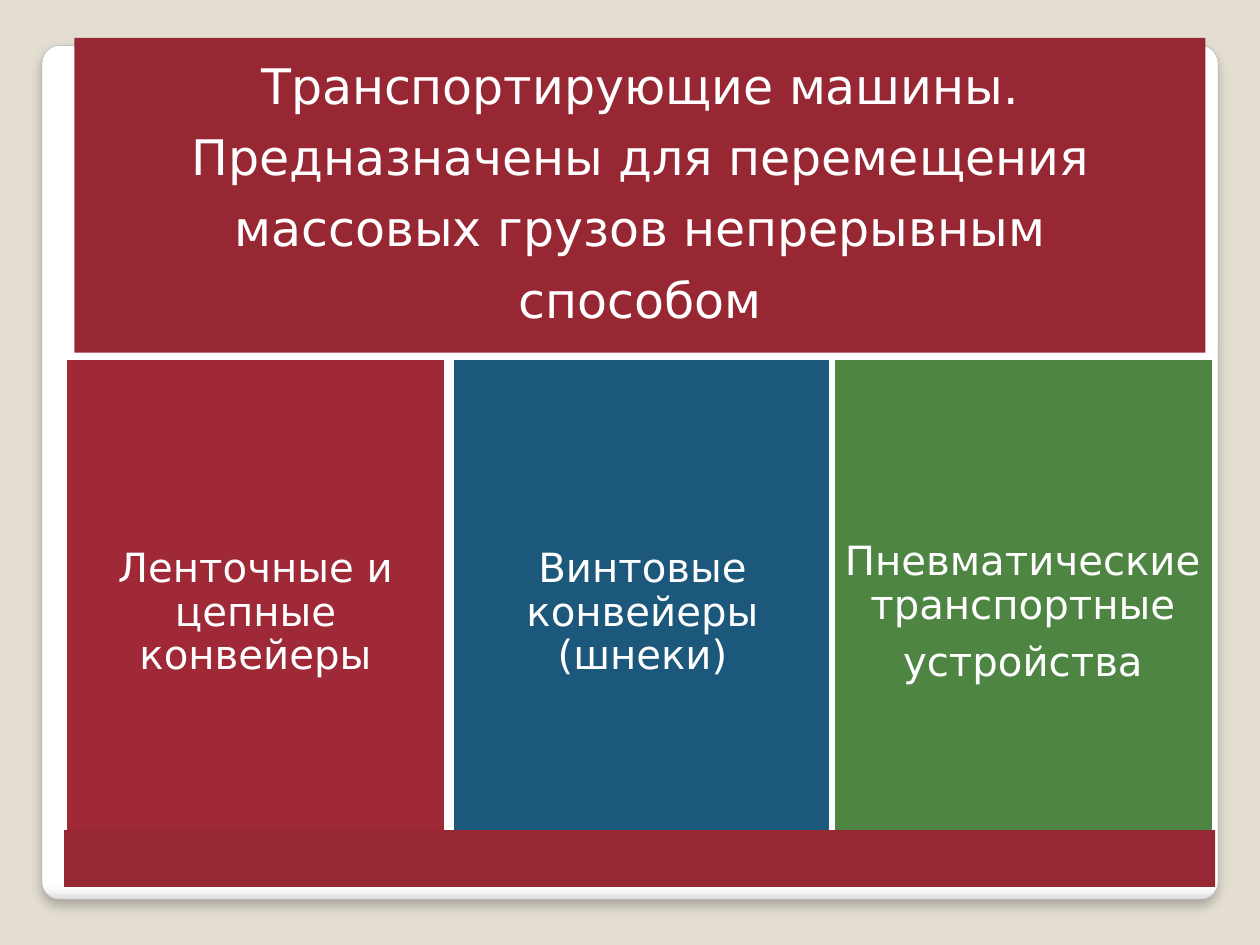
import pptx
import pptx.dml.color
import pptx.enum.shapes
import pptx.enum.text
import pptx.oxml
import pptx.oxml.ns
import pptx.util

Pt = pptx.util.Pt
RGBColor = pptx.dml.color.RGBColor
qn = pptx.oxml.ns.qn
SHAPE = pptx.enum.shapes.MSO_SHAPE

PAPER = RGBColor(0xE3, 0xDE, 0xD1)
WHITE = RGBColor(0xFF, 0xFF, 0xFF)
FRAME_LINE = RGBColor(0xA4, 0xA4, 0xA4)
DARK_RED = RGBColor(0x98, 0x27, 0x34)
RED = RGBColor(0x9F, 0x29, 0x36)
BLUE = RGBColor(0x1B, 0x58, 0x7C)
GREEN = RGBColor(0x4E, 0x85, 0x42)

FONT = "DejaVu Sans"
DRAWING = 'xmlns:a="http://schemas.openxmlformats.org/drawingml/2006/main"'
FRAME_STOPS = [(0, "FFFFFF"), (98, "FFFFFF"), (99, "F7F7F7"), (100, "DADADA")]

TITLE = [
    "Транспортирующие машины.",
    "Предназначены для перемещения",
    "массовых грузов непрерывным",
    "способом",
]
# Left edge, colour and paragraphs of each machine type
MACHINES = [
    (36.7, RED, ["Ленточные и цепные конвейеры"]),
    (257.8, BLUE, ["Винтовые конвейеры (шнеки)"]),
    (475.2, GREEN, ["Пневматические транспортные", "устройства"]),
]


def add_block(page, box, colour, border=None):
    """Add a plain rectangle, with a white border if a width is given."""
    block = page.shapes.add_shape(SHAPE.RECTANGLE, *map(Pt, box))
    block.shadow.inherit = False
    block.fill.solid()
    block.fill.fore_color.rgb = colour
    if border:
        block.line.color.rgb = WHITE
        block.line.width = Pt(border)
    else:
        block.line.fill.background()
    return block


def write_centred(block, lines, size, inset, space_after):
    frame = block.text_frame
    frame.word_wrap = True
    frame.vertical_anchor = pptx.enum.text.MSO_ANCHOR.MIDDLE
    frame.margin_left = frame.margin_right = Pt(inset)
    frame.margin_top = frame.margin_bottom = Pt(inset)
    for index, line in enumerate(lines):
        para = frame.add_paragraph() if index else frame.paragraphs[0]
        para.alignment = pptx.enum.text.PP_ALIGN.CENTER
        para.line_spacing = 0.9
        para.space_after = Pt(space_after)
        span = para.add_run()
        span.text = line
        span.font.name = FONT
        span.font.size = Pt(size)
        span.font.color.rgb = WHITE


def add_frame(page, box):
    """Add the rounded white card with a shaded lower edge and soft shadow."""
    card = page.shapes.add_shape(SHAPE.ROUNDED_RECTANGLE, *map(Pt, box))
    card.adjustments[0] = 0.021
    card.line.color.rgb = FRAME_LINE
    card.line.width = Pt(0.16)
    card.fill.gradient()
    card.fill.gradient_angle = 270
    card.shadow.inherit = False

    properties = card.element.spPr
    stops = properties.find(qn("a:gradFill")).find(qn("a:gsLst"))
    for stop in list(stops):
        stops.remove(stop)
    for position, colour in FRAME_STOPS:
        stops.append(pptx.oxml.parse_xml(
            f'<a:gs {DRAWING} pos="{position * 1000}">'
            f'<a:srgbClr val="{colour}"/></a:gs>'))
    properties.find(qn("a:effectLst")).append(pptx.oxml.parse_xml(
        f'<a:outerShdw {DRAWING} blurRad="{Pt(6)}" dist="{Pt(4)}" '
        'dir="5400000" algn="t" rotWithShape="0"><a:srgbClr val="000000">'
        '<a:alpha val="25000"/></a:srgbClr></a:outerShdw>'))


def add_title(page, box):
    block = add_block(page, box, DARK_RED)
    write_centred(block, TITLE, size=28, inset=8.4, space_after=10.5)


def add_machines(page, top, width, height):
    for left, colour, lines in MACHINES:
        block = add_block(page, (left, top, width, height), colour, border=3.35)
        write_centred(block, lines, size=23, inset=7, space_after=8)


def main():
    deck = pptx.Presentation()
    deck.slide_width, deck.slide_height = Pt(720), Pt(540)
    page = deck.slides.add_slide(deck.slide_layouts[6])
    page.background.fill.solid()
    page.background.fill.fore_color.rgb = PAPER

    add_frame(page, (24, 26, 672, 488))
    add_title(page, (42.5, 21.6, 646.4, 180))
    add_machines(page, top=203.8, width=218.8, height=293)
    # Bar along the foot of the columns
    add_block(page, (36.7, 474.4, 657.6, 32.4), DARK_RED)

    deck.save("out.pptx")


if __name__ == "__main__":
    main()
